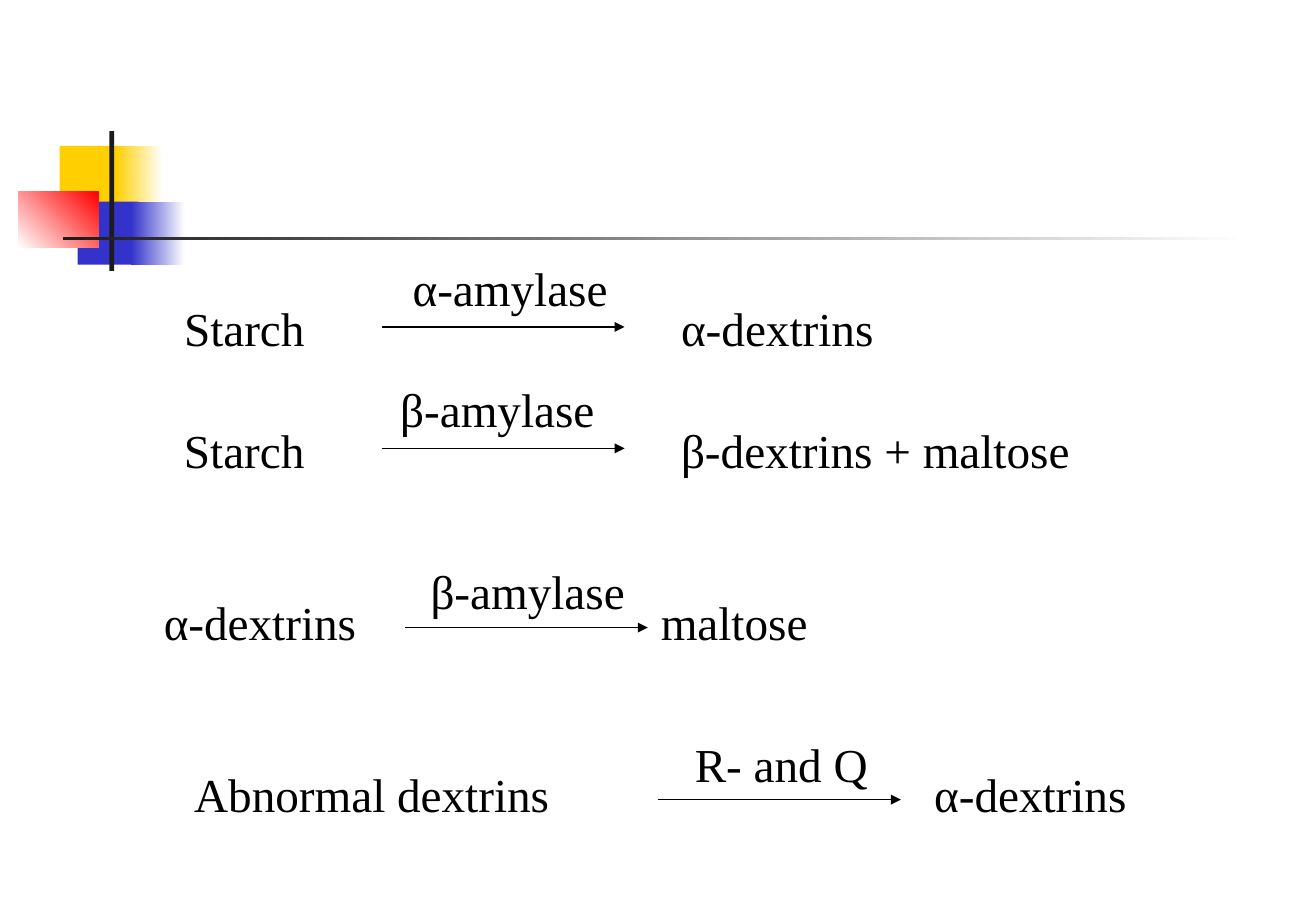
from lxml.etree import SubElement
from pptx import Presentation
from pptx.dml.color import RGBColor
from pptx.enum.shapes import MSO_CONNECTOR, MSO_SHAPE
from pptx.enum.text import MSO_ANCHOR, PP_ALIGN
from pptx.oxml.ns import qn
from pptx.util import Inches, Pt

BLACK = RGBColor(0x00, 0x00, 0x00)
WHITE = RGBColor(0xFF, 0xFF, 0xFF)
YELLOW = RGBColor(0xFF, 0xCF, 0x01)
BLUE = RGBColor(0x33, 0x33, 0xCC)
RED = RGBColor(0xFF, 0x00, 0x00)
DARK = RGBColor(0x1C, 0x1C, 0x1C)

COLUMNS, ROWS = 130, 90
TEXT_HEIGHT = 6.84
LABEL_WIDTH = 22.8
ARROW_LENGTH = 24

# left, top, width, height, colours, gradient angle
ORNAMENTS = [
    (5.88, 14.4, 6.24, 6.24, (YELLOW,), 0),
    (11.4, 14.4, 4.68, 6.24, (YELLOW, WHITE), 0),
    (7.68, 19.92, 6, 6.24, (BLUE,), 0),
    (12.96, 19.92, 5.28, 6.24, (BLUE, WHITE), 0),
    (1.8, 18.96, 7.92, 5.52, (WHITE, RED), 45),
    (10.8, 12.96, 0.48, 13.8, (DARK,), 0),
    (6.24, 23.4, 117, 0.36, (DARK, WHITE), 0),
]

# substrate, product, (left, top, width, tab), enzyme, (right, top), arrow start
REACTIONS = [
    ("Starch", "α-dextrins", (17, 29, 72.3, 49.1),
     "α-amylase", (61.2, 25), (37.7, 32.3)),
    ("Starch", "β-dextrins + maltose", (17, 41, 91, 49.1),
     "β-amylase", (59.9, 37), (37.7, 44.3)),
    ("α-dextrins", "maltose", (15, 58, 67, 49.1),
     "β-amylase", (62.9, 55), (40, 62)),
    ("Abnormal dextrins", "α-dextrins", (18, 75, 96.3, 73.1),
     "R- and Q", (86.9, 72.1), (65, 79)),
]


def cells(*counts):
    return [Inches(count / 12) for count in counts]


def add_ornament(page, area, colours, angle):
    shape = page.shapes.add_shape(MSO_SHAPE.RECTANGLE, *cells(*area))
    shape.shadow.inherit = False
    shape.line.fill.background()
    if len(colours) == 1:
        shape.fill.solid()
        shape.fill.fore_color.rgb = colours[0]
    else:
        shape.fill.gradient()
        shape.fill.gradient_angle = angle
        for stop, colour, position in zip(shape.fill.gradient_stops, colours, (0, 1)):
            stop.color.rgb = colour
            stop.position = position


def add_text(page, text, area, align=PP_ALIGN.LEFT, anchor=MSO_ANCHOR.TOP, tab=None):
    box = page.shapes.add_textbox(*cells(*area))
    box.text_frame.word_wrap = True
    box.text_frame.vertical_anchor = anchor
    para = box.text_frame.paragraphs[0]
    para.alignment = align
    if tab:
        stops = SubElement(para._p.get_or_add_pPr(), qn("a:tabLst"))
        SubElement(stops, qn("a:tab"), pos=str(cells(tab)[0]), algn="l")
    span = para.add_run()
    span.text = text
    span.font.name = "Times New Roman"
    span.font.size = Pt(28)
    span.font.color.rgb = BLACK


def add_arrow(page, left, top):
    arrow = page.shapes.add_connector(
        MSO_CONNECTOR.STRAIGHT, *cells(left, top, left + ARROW_LENGTH, top))
    arrow.line.color.rgb = BLACK
    arrow.line.width = Pt(0.75)
    SubElement(arrow.line._get_or_add_ln(), qn("a:tailEnd"), type="triangle")
    SubElement(arrow._element.spPr, qn("a:effectLst"))


def main():
    deck = Presentation()
    deck.slide_width, deck.slide_height = cells(COLUMNS, ROWS)
    page = deck.slides.add_slide(deck.slide_layouts[6])
    for *area, colours, angle in ORNAMENTS:
        add_ornament(page, area, colours, angle)
    for substrate, product, (left, top, width, tab), enzyme, label, start in REACTIONS:
        add_arrow(page, *start)
        add_text(page, f"{substrate}\t{product}", (left, top, width, TEXT_HEIGHT),
                 anchor=MSO_ANCHOR.MIDDLE, tab=tab)
        right, label_top = label
        add_text(page, enzyme, (right - LABEL_WIDTH, label_top, LABEL_WIDTH, TEXT_HEIGHT),
                 align=PP_ALIGN.RIGHT)
    deck.save("out.pptx")


if __name__ == "__main__":
    main()
